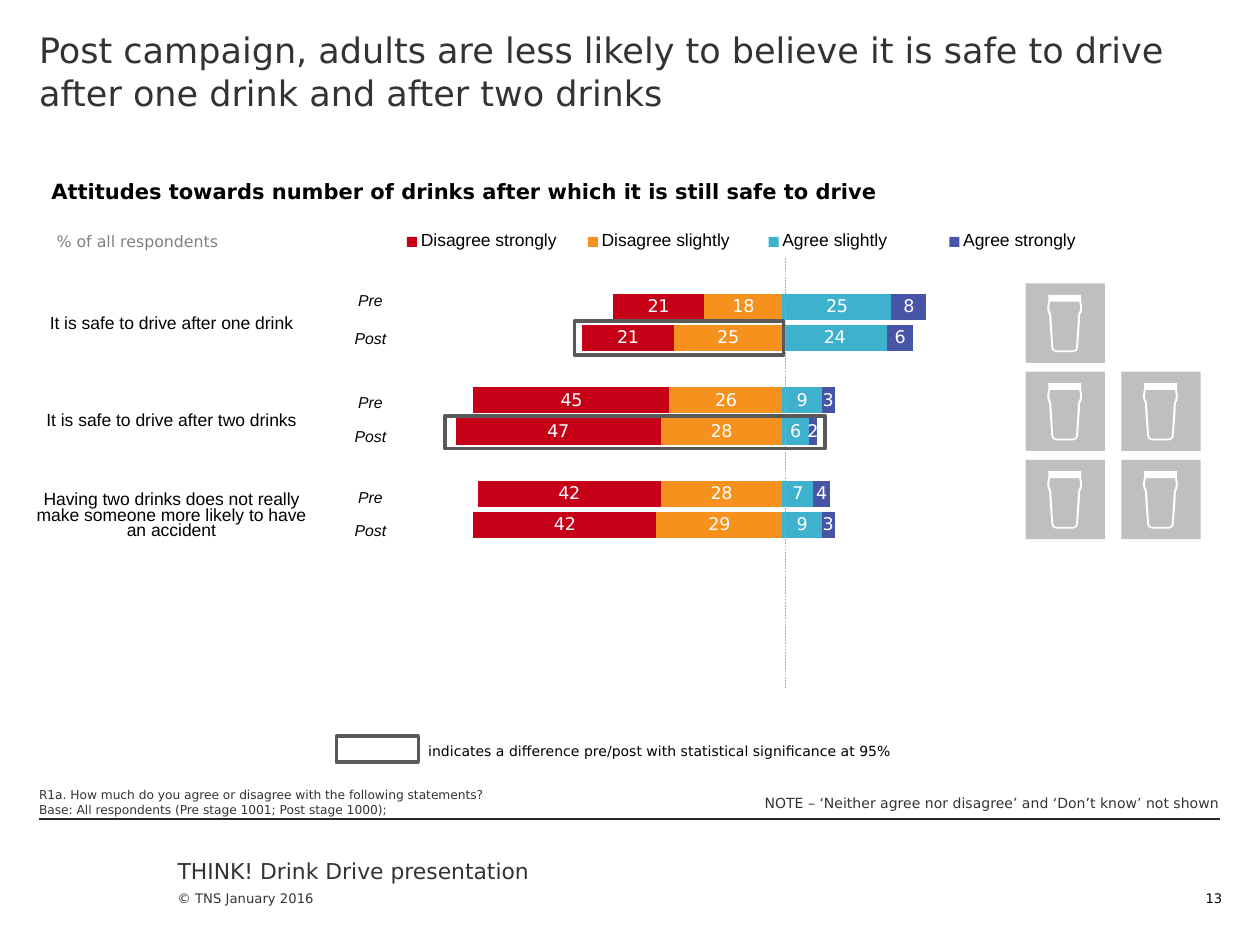
"""Build the slide on attitudes to drink driving before and after the campaign."""
from typing import NamedTuple, Optional

from lxml.etree import SubElement
from pptx import Presentation
from pptx.chart.data import CategoryChartData
from pptx.dml.color import RGBColor
from pptx.enum.chart import XL_CHART_TYPE as ChartType, XL_LABEL_POSITION as LabelPosition
from pptx.enum.dml import MSO_LINE_DASH_STYLE as Dash
from pptx.enum.shapes import MSO_CONNECTOR, MSO_SHAPE
from pptx.enum.text import MSO_ANCHOR as Anchor, MSO_AUTO_SIZE as AutoSize, PP_ALIGN as Align
from pptx.oxml.ns import qn
from pptx.util import Inches, Pt

SANS, ARIAL = "DejaVu Sans", "Arial"
DARK, BLACK, WHITE = "333333", "000000", "FFFFFF"
NO_INSETS = (0, 0, 0, 0)
DEFAULT_INSETS = (0.1, 0.05, 0.1, 0.05)


class Box(NamedTuple):
    left: float
    top: float
    width: float
    height: float

    def lengths(self) -> list:
        return [Inches(value) for value in self]


class Label(NamedTuple):
    lines: list
    box: Box
    size: float
    color: str = DARK
    insets: tuple = NO_INSETS
    anchor: Anchor = Anchor.TOP
    align: Align = Align.LEFT
    bold: bool = False
    wrap: bool = True


class Answer(NamedTuple):
    name: str
    color: str
    values: list


LABELS = [
    Label(["THINK! Drink Drive presentation"], Box(1.41, 6.81, 3.31, 0.22), 12.5),
    Label(["© TNS January 2016"], Box(1.41, 6.92, 2.78, 0.58), 7.5,
          insets=(0, 0, 0, 0.31), anchor=Anchor.BOTTOM),
    Label(["R1a. How much do you agree or disagree with the following statements?",
           "Base: All respondents (Pre stage 1001; Post stage 1000);"],
          Box(0.31, 6.16, 5.71, 0.41), 7, anchor=Anchor.MIDDLE),
    Label(["% of all respondents"], Box(0.45, 1.84, 1.5, 0.19), 9, "808080"),
    Label(["Attitudes towards number of drinks after which it is still safe to drive"],
          Box(0.31, 1.37, 7.13, 0.3), 12, BLACK, DEFAULT_INSETS, bold=True),
    Label(["13"], Box(9.25, 7.02, 0.55, 0.28), 7.5, BLACK, DEFAULT_INSETS, align=Align.RIGHT),
    Label(["NOTE – ‘Neither agree nor disagree’ and ‘Don’t know’ not shown"],
          Box(5.97, 6.26, 3.83, 0.24), 8, insets=DEFAULT_INSETS, wrap=False),
    Label(["indicates a difference pre/post with statistical significance at 95%"],
          Box(3.3, 5.84, 3.98, 0.24), 8, BLACK, DEFAULT_INSETS),
]
ANSWERS = [
    Answer("Disagree strongly", "C50017", [-21, -21, None, -45, -47, None, -42, -42]),
    Answer("Disagree slightly", "F7911E", [-18, -25, None, -26, -28, None, -28, -29]),
    Answer("Agree slightly", "3EB1CC", [25, 24, None, 9, 6, None, 7, 9]),
    Answer("Agree strongly", "4655A5", [8, 6, None, 3, 2, None, 4, 3]),
]
STACK_ORDER = [1, 0, 2, 3]
ROW_COUNT = 14
STATEMENTS = ["It is safe to drive after one drink", "It is safe to drive after two drinks",
              "Having two drinks does not really make someone more likely to have an accident"]
ROW_HEIGHTS = [0.25, 0.32, 0.24] + [0.25] * 11
LEGEND = Box(3.24, 1.77, 5.74, 0.27)
HIGHLIGHTS = [Box(2.67, 5.84, 0.65, 0.21), Box(4.56, 2.55, 1.66, 0.27), Box(3.53, 3.3, 3.02, 0.26)]
DRINKS_PER_ROW = [1, 2, 2]
GLASS_OUTER = [(130, 0), (130, 52), (135, 70), (138, 110), (134, 140), (122, 158), (120, 220),
               (106, 415), (97, 442), (70, 455)]
GLASS_INNER = [(115, 55), (120, 75), (122, 110), (117, 135), (107, 155), (103, 220),
               (91, 415), (84, 436), (68, 441)]


def rgb(color: str) -> RGBColor:
    return RGBColor.from_string(color)


def apply(target, values: dict) -> None:
    for name, value in values.items():
        setattr(target, name, value)


def set_font(font, size: float, color: str, name: str = SANS, bold: bool = False,
             italic: bool = False) -> None:
    apply(font, {"size": Pt(size), "name": name, "bold": bold, "italic": italic})
    font.color.rgb = rgb(color)


def set_frame(frame, insets: tuple, anchor: Anchor, wrap: bool = True) -> None:
    sides = ("margin_left", "margin_top", "margin_right", "margin_bottom")
    apply(frame, dict(zip(sides, map(Inches, insets))))
    apply(frame, {"auto_size": AutoSize.NONE, "vertical_anchor": anchor, "word_wrap": wrap})


def add_label(slide, label: Label) -> None:
    frame = slide.shapes.add_textbox(*label.box.lengths()).text_frame
    set_frame(frame, label.insets, label.anchor, label.wrap)
    for index, line in enumerate(label.lines):
        paragraph = frame.add_paragraph() if index else frame.paragraphs[0]
        paragraph.alignment = label.align
        run = paragraph.add_run()
        run.text = line
        set_font(run.font, label.size, label.color, bold=label.bold)


def add_title(slide, text: str) -> None:
    title = slide.shapes.title
    apply(title, dict(zip(("left", "top", "width", "height"), Box(0.31, 0, 9.37, 1.13).lengths())))
    set_frame(title.text_frame, (0, 0.23, 0, 0), Anchor.TOP)
    paragraph = title.text_frame.paragraphs[0]
    paragraph.alignment = Align.LEFT
    run = paragraph.add_run()
    run.text = text
    set_font(run.font, 20, DARK)


def add_rectangle(shapes, box: Box, fill: Optional[str] = None, line: Optional[str] = None) -> None:
    shape = shapes.add_shape(MSO_SHAPE.RECTANGLE, *box.lengths())
    shape.shadow.inherit = False
    if fill:
        shape.fill.solid()
        shape.fill.fore_color.rgb = rgb(fill)
    else:
        shape.fill.background()
    if line:
        shape.line.color.rgb = rgb(line)
        shape.line.width = Pt(2)
    else:
        shape.line.fill.background()


def add_line(slide, start: tuple, end: tuple, color: str, width: float,
             dash: Optional[Dash] = None) -> None:
    line = slide.shapes.add_connector(MSO_CONNECTOR.STRAIGHT, *map(Inches, start + end))
    line.line.color.rgb = rgb(color)
    apply(line.line, {"width": Pt(width), "dash_style": dash})
    SubElement(line._element.spPr, qn("a:effectLst"))


def add_chart(slide) -> None:
    data = CategoryChartData()
    data.categories = [str(number + 1) for number in range(ROW_COUNT)]
    answers = [ANSWERS[index] for index in STACK_ORDER]
    for answer in answers:
        data.add_series(answer.name, answer.values + [None] * (ROW_COUNT - len(answer.values)))
    box = Box(3.26, 1.37, 6.44, 4.59)
    chart = slide.shapes.add_chart(ChartType.BAR_STACKED, *box.lengths(), data).chart
    apply(chart, {"has_legend": False, "has_title": False})
    set_font(chart.font, 10, BLACK, ARIAL)
    apply(chart.category_axis, {"reverse_order": True, "visible": False})
    apply(chart.value_axis, {"minimum_scale": -80, "maximum_scale": 90, "visible": False,
                             "has_major_gridlines": False})
    plot = chart.plots[0]
    apply(plot, {"gap_width": 19, "overlap": 100, "vary_by_categories": False})
    for series, answer in zip(plot.series, answers):
        series.invert_if_negative = False
        series.format.fill.solid()
        series.format.fill.fore_color.rgb = rgb(answer.color)
        apply(series.data_labels, {"show_value": True, "number_format": "#,##0;[White]#,##0",
                                   "number_format_is_linked": False,
                                   "position": LabelPosition.CENTER})
        set_font(series.data_labels.font, 10, WHITE)
    area = chart._chartSpace.chart.plotArea
    for layout in area.findall(qn("c:layout")):
        area.remove(layout)
    layout = SubElement(area, qn("c:layout"))
    area.insert(0, layout)
    manual = SubElement(layout, qn("c:manualLayout"))
    for name, value in {"layoutTarget": "inner", "xMode": "edge", "yMode": "edge", "x": "0.029",
                        "y": "0.205", "w": "0.912", "h": "0.755"}.items():
        SubElement(manual, qn(f"c:{name}"), val=value)


def add_plain_table(slide, box: Box, widths: list, heights: list):
    table = slide.shapes.add_table(len(heights), len(widths), *box.lengths()).table
    apply(table, {"first_row": False, "horz_banding": False})
    for column, width in zip(table.columns, widths):
        column.width = Inches(width)
    for row, height in zip(table.rows, heights):
        row.height = Inches(height)
    for cell in table.iter_cells():
        cell.fill.background()
        apply(cell, {"margin_top": 0, "margin_bottom": 0, "vertical_anchor": Anchor.MIDDLE})
    return table


def write_cell(cell, text: str, size: float = 10, italic: bool = False,
               align: Align = Align.LEFT, spacing: float = 1.0) -> None:
    paragraph = cell.text_frame.paragraphs[0]
    apply(paragraph, {"alignment": align, "line_spacing": spacing})
    run = paragraph.add_run()
    run.text = text
    set_font(run.font, size, BLACK, ARIAL, italic=italic)


def add_statements(slide) -> None:
    box = Box(0.1, 2.29, 3.16, sum(ROW_HEIGHTS))
    table = add_plain_table(slide, box, [2.52, 0.64], ROW_HEIGHTS)
    for top in range(0, ROW_COUNT, 3):
        table.cell(top, 0).merge(table.cell(top + 1, 0))
    for index, statement in enumerate(STATEMENTS):
        top = index * 3
        write_cell(table.cell(top, 0), statement, align=Align.CENTER, spacing=0.8)
        for offset, (stage, spacing) in enumerate([("Pre", 0.5), ("Post", 0.8)]):
            write_cell(table.cell(top + offset, 1), stage, 9, True, Align.CENTER, spacing)
    for cell in table.iter_cells():
        if not cell.text_frame.text:
            SubElement(cell.text_frame.paragraphs[0]._p, qn("a:endParaRPr"), sz="800")


def add_legend(slide) -> None:
    step = LEGEND.width / len(ANSWERS)
    table = add_plain_table(slide, LEGEND, [step] * len(ANSWERS), [LEGEND.height])
    for index, answer in enumerate(ANSWERS):
        write_cell(table.cell(0, index), answer.name)
        swatch = Box(LEGEND.left - 0.01 + index * step, 1.88, 0.08, 0.08)
        add_rectangle(slide.shapes, swatch, fill=answer.color)


def add_glass(slide, left: float, top: float) -> None:
    shapes = slide.shapes.add_group_shape().shapes
    add_rectangle(shapes, Box(left, top, 0.63, 0.63), fill="BFBFBF")
    outer, inner = ([*half, *((-x, y) for x, y in reversed(half))]
                    for half in (GLASS_OUTER, GLASS_INNER))
    builder = shapes.build_freeform(*outer[0], scale=Inches(1) / 1000)
    builder.add_line_segments(outer[1:])
    builder.move_to(*inner[0])
    builder.add_line_segments(inner[1:])
    glass = builder.convert_to_shape(Inches(left + 0.31), Inches(top + 0.09))
    glass.shadow.inherit = False
    glass.fill.solid()
    glass.fill.fore_color.rgb = rgb(WHITE)
    glass.line.fill.background()


def main() -> None:
    presentation = Presentation()
    apply(presentation, {"slide_width": Inches(10), "slide_height": Inches(7.5)})
    slide = presentation.slides.add_slide(presentation.slide_layouts[5])
    add_title(slide, "Post campaign, adults are less likely to believe it is safe to drive "
                     "after one drink and after two drinks")
    add_line(slide, (0.31, 6.5), (9.68, 6.5), "262626", 0.75)
    add_chart(slide)
    add_statements(slide)
    add_line(slide, (6.23, 5.46), (6.23, 2.03), "A6A6A6", 0.25, Dash.DASH)
    add_legend(slide)
    for label in LABELS:
        add_label(slide, label)
    for box in HIGHLIGHTS:
        add_rectangle(slide.shapes, box, line="595959")
    for row, count in enumerate(DRINKS_PER_ROW):
        for column in range(count):
            add_glass(slide, 8.14 + 0.76 * column, 2.25 + 0.7 * row)
    presentation.save("out.pptx")


if __name__ == "__main__":
    main()
